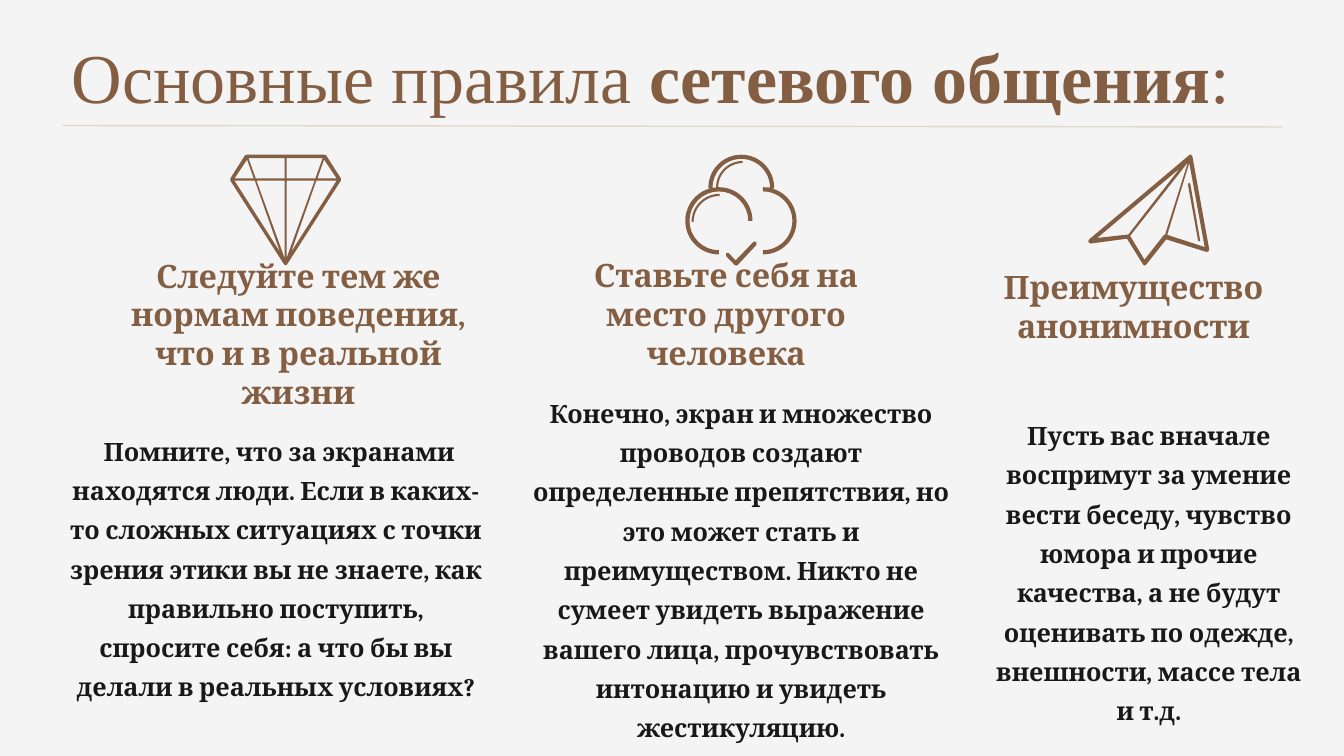
from math import cos, radians, sin

from lxml import etree
from pptx import Presentation
from pptx.dml.color import RGBColor
from pptx.enum.shapes import MSO_CONNECTOR
from pptx.enum.text import MSO_ANCHOR, MSO_AUTO_SIZE, PP_ALIGN
from pptx.oxml.ns import qn
from pptx.util import Pt

PAPER = RGBColor(0xF4, 0xF4, 0xF4)
BROWN = RGBColor(0x84, 0x5E, 0x42)
INK = RGBColor(0x18, 0x18, 0x18)
TAUPE = RGBColor(0x78, 0x6F, 0x5F)
RULE = RGBColor(0xDF, 0xD8, 0xCC)

INSET = 4.3
ICON_TOP = 221
GEM_WIDTH = 158

# Each column: heading and its box, body runs and their box (left, top, width, height).
COLUMNS = [
    ("Следуйте тем же нормам поведения, что и в реальной жизни",
     (144.7, 360.7, 563, 231),
     [(" ", "Lato", TAUPE, False),
      ("Помните, что за экранами находятся люди. Если в каких-то сложных "
       "ситуациях с точки зрения этики вы не знаете, как правильно поступить, "
       "спросите себя: а что бы вы делали в реальных условиях?",
       "Cambria", INK, True)],
     (89.3, 605.5, 609.8, 399.6)),
    ("Ставьте себя на место другого человека",
     (779.8, 360.7, 514.8, 175),
     [("Конечно, экран и множество проводов создают определенные препятствия, "
       "но это может стать и преимуществом. Никто не сумеет увидеть выражение "
       "вашего лица, прочувствовать интонацию и увидеть жестикуляцию.",
       "Cambria", INK, True)],
     (749.5, 551.5, 618.5, 512.6)),
    ("Преимущество анонимности",
     (1406.2, 377.3, 426.2, 119.5),
     [("Пусть вас вначале воспримут за умение вести беседу, чувство юмора и "
       "прочие качества, а не будут оценивать по одежде, внешности, массе тела "
       "и т.д.", "Cambria", INK, True)],
     (1404.7, 583.2, 473, 455.8)),
]


def arc(center, radius, start, end, steps=24):
    """Points along a circle; degrees run clockwise from the right."""
    x, y = center
    angles = [radians(start + (end - start) * i / steps) for i in range(steps + 1)]
    return [(x + radius * cos(a), y + radius * sin(a)) for a in angles]


def gem_contours():
    outline = [(158, 34), (137, 1), (134, 0), (24, 0), (21, 1), (0, 34), (0, 37),
               (77, 157), (79, 158), (81, 157), (158, 37)]
    right_facets = [
        [(80.5, 37), (120.5, 37), (80.5, 147.5)],
        [(80.5, 34), (80.5, 5), (132, 5), (121.5, 34)],
        [(123, 37), (152, 37), (87, 139)],
        [(152, 34), (124.5, 34), (134, 7)],
    ]
    left_facets = [[(GEM_WIDTH - x, y) for x, y in facet] for facet in right_facets]
    return [outline] + right_facets + left_facets


def cloud_contours():
    top, left, right = (80, 47), (48, 94.5), (111, 94.5)
    top_shine, left_shine = (82, 47), (49, 96)
    outline = (arc(top, 47, 0, -180) + arc(left, 48, -106, -270)
               + arc(left, 42, -270, 0) + arc(left, 48, 0, -92)
               + arc(top_shine, 35, -178, -90) + arc(top_shine, 38, -90, -180)
               + arc(top, 41, -180, 0) + arc(right, 48, -84, -90)
               + arc(right, 42, -90, 90) + arc(right, 48, 90, -73))
    shine = arc(left_shine, 40, -180, -90) + arc(left_shine, 37, -90, -180)
    tick = [(97, 125), (72, 151), (62, 140.5), (58.5, 140.5), (58.5, 145),
            (70.5, 157.5), (73, 158.5), (75, 157.5), (101.5, 129), (101.5, 125),
            (99.5, 124)]
    return [outline, shine, tick]


def plane_contours():
    outline = [(145.5, 0), (144, 1), (1.5, 121), (0, 124.5), (3.5, 127), (55.5, 120),
               (78.5, 157), (80.5, 158.4), (83, 157), (111.5, 121), (169, 139),
               (172, 138), (173, 135.5), (149, 3), (147, 0)]
    middle_fold = [(142.5, 11), (110, 114), (108, 115), (80.5, 150), (60, 116)]
    right_wing = [(144.5, 12), (166.5, 132), (113, 114.5)]
    left_wing = [(131, 19.5), (57.5, 114), (13, 119)]
    crease = [(144, 40), (142.5, 42.5), (157, 122.5), (158.5, 124), (160, 122.5),
              (146, 42)]
    return [outline, middle_fold, right_wing, left_wing, crease]


def add_icon(shapes, contours, left):
    """Draw all contours as one filled shape; inner contours become holes."""
    outlines = [[(Pt(x), Pt(y)) for x, y in contour] for contour in contours]
    builder = shapes.build_freeform(*outlines[0][0], scale=1.0)
    builder.add_line_segments(outlines[0][1:], close=True)
    for outline in outlines[1:]:
        builder.move_to(*outline[0])
        builder.add_line_segments(outline[1:], close=True)
    icon = builder.convert_to_shape(Pt(left), Pt(ICON_TOP))
    icon.shadow.inherit = False
    icon.fill.solid()
    icon.fill.fore_color.rgb = BROWN
    icon.line.fill.background()


def add_text(shapes, box, runs, size, align=PP_ALIGN.CENTER,
             anchor=MSO_ANCHOR.MIDDLE, spacing=None):
    """Add one paragraph; runs are (text, font, colour, bold)."""
    frame = shapes.add_textbox(*map(Pt, box)).text_frame
    frame.word_wrap = True
    frame.auto_size = MSO_AUTO_SIZE.SHAPE_TO_FIT_TEXT
    frame.vertical_anchor = anchor
    frame.margin_left = frame.margin_right = Pt(INSET)
    frame.margin_top = frame.margin_bottom = Pt(INSET)
    paragraph = frame.paragraphs[0]
    paragraph.alignment = align
    paragraph.line_spacing = spacing
    for text, font_name, colour, bold in runs:
        run = paragraph.add_run()
        run.text = text
        run.font.name = font_name
        run.font.size = Pt(size)
        run.font.bold = bold
        run.font.color.rgb = colour


def add_column(shapes, heading, heading_box, body_runs, body_box):
    column = shapes.add_group_shape().shapes
    add_text(column, body_box, body_runs, 36, anchor=MSO_ANCHOR.TOP, spacing=1.3)
    add_text(column, heading_box, [(heading, "Cambria", BROWN, True)], 46)


def add_title(shapes):
    title_font = "Times New Roman"
    add_text(shapes, (98, 43.2, 1824.5, 129.6),
             [("Основные правила ", title_font, BROWN, False),
              ("сетевого общения", title_font, BROWN, True),
              (":", title_font, BROWN, False)],
             100, align=PP_ALIGN.LEFT)


def add_title_rule(shapes):
    rule = shapes.add_connector(MSO_CONNECTOR.STRAIGHT,
                                Pt(89.3), Pt(179.3), Pt(1832.4), Pt(181.4))
    rule.line.color.rgb = RULE
    rule.line.width = Pt(2)
    etree.SubElement(rule._element.spPr, qn("a:effectLst"))


def main():
    deck = Presentation()
    deck.slide_width, deck.slide_height = Pt(1920), Pt(1080)
    slide = deck.slides.add_slide(deck.slide_layouts[6])
    slide.background.fill.solid()
    slide.background.fill.fore_color.rgb = PAPER
    shapes = slide.shapes

    for column in COLUMNS:
        add_column(shapes, *column)
    add_icon(shapes, cloud_contours(), 979)
    add_icon(shapes, gem_contours(), 329)
    add_icon(shapes, plane_contours(), 1554.5)
    add_title(shapes)
    add_title_rule(shapes)
    deck.save("out.pptx")


if __name__ == "__main__":
    main()
